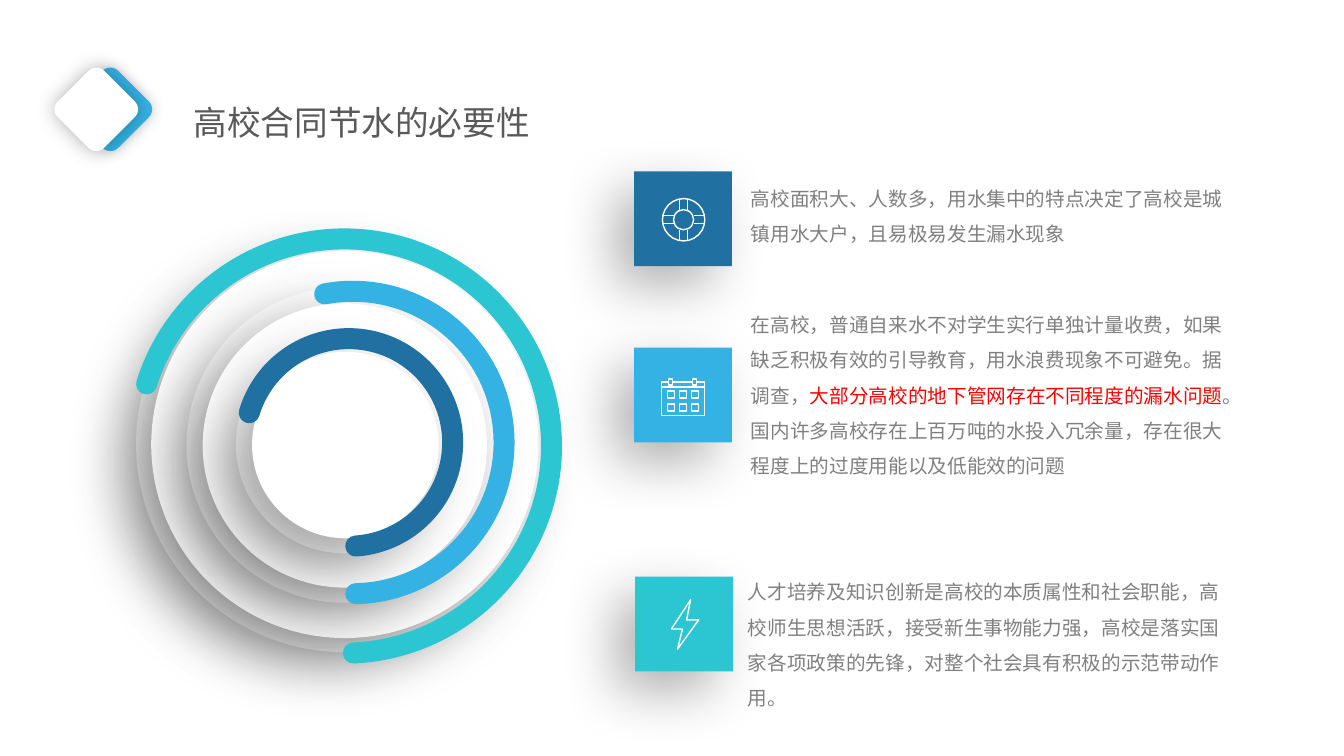
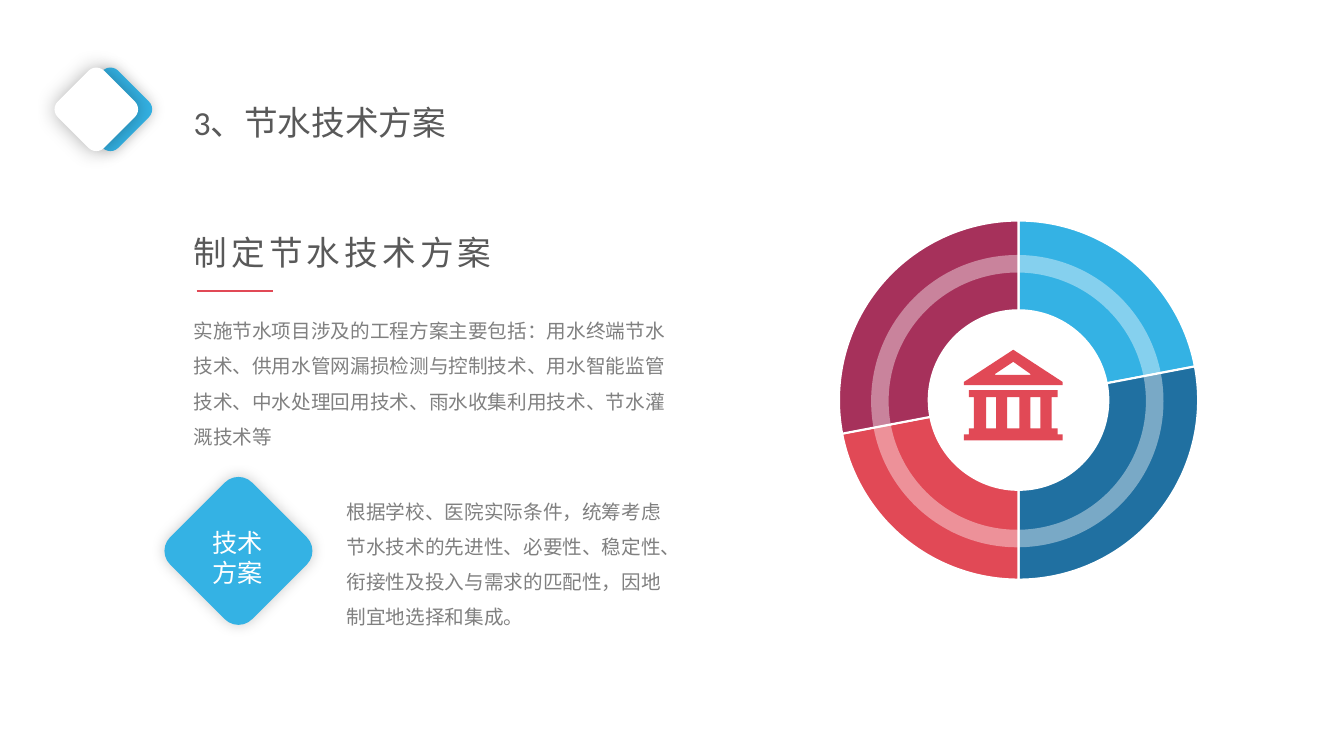
from dataclasses import dataclass

from lxml import etree
from pptx import Presentation
from pptx.chart.data import CategoryChartData
from pptx.dml.color import RGBColor
from pptx.enum.chart import XL_CHART_TYPE
from pptx.enum.shapes import MSO_CONNECTOR, MSO_SHAPE
from pptx.enum.text import MSO_ANCHOR, MSO_AUTO_SIZE, PP_ALIGN
from pptx.oxml.ns import qn
from pptx.util import Pt

RECT, ROUND = MSO_SHAPE.RECTANGLE, MSO_SHAPE.ROUNDED_RECTANGLE
OVAL, ARC, DONUT = MSO_SHAPE.OVAL, MSO_SHAPE.ARC, MSO_SHAPE.DONUT
STRAIGHT = MSO_CONNECTOR.STRAIGHT
RING = XL_CHART_TYPE.DOUGHNUT
TOP, LEFT, MID = MSO_ANCHOR.TOP, PP_ALIGN.LEFT, PP_ALIGN.CENTER
FIXED, GROW = MSO_AUTO_SIZE.NONE, MSO_AUTO_SIZE.SHAPE_TO_FIT_TEXT
SCALE = 9144


@dataclass(frozen=True)
class Theme:
    font: str = "Calibri"
    white: RGBColor = RGBColor(255, 255, 255)
    black: RGBColor = RGBColor(0, 0, 0)
    dark: RGBColor = RGBColor(0x59, 0x59, 0x59)
    gray: RGBColor = RGBColor(0x80, 0x80, 0x80)
    alert: RGBColor = RGBColor(255, 0, 0)
    navy: RGBColor = RGBColor(0x20, 0x70, 0xA1)
    sky: RGBColor = RGBColor(0x34, 0xB2, 0xE4)
    teal: RGBColor = RGBColor(0x2C, 0xC6, 0xD2)
    coral: RGBColor = RGBColor(0xE1, 0x49, 0x56)
    plum: RGBColor = RGBColor(0xA6, 0x31, 0x5B)
    head: int = 24
    label: int = 18
    body: int = 14
    small: int = 10


T = Theme()
DEEP = {"alpha": 30, "blur": 40, "dist": 20, "angle": 135}
SOFT = {"alpha": 20, "blur": 10, "dist": 0, "angle": 0}
HALO = {"alpha": 30, "blur": 15, "dist": 0, "angle": 0}


def px(*sizes):
    return [size * SCALE for size in sizes]


def apply(target, values):
    for name, value in values.items():
        setattr(target, name, value)


def fade(color, alpha):
    etree.SubElement(color, qn("a:alpha"), val=str(alpha * 1000))


def paint(shape, fill=None, line=None, width=1, alpha=None, shade=None):
    shape.shadow.inherit = False
    props = shape.element.spPr
    if fill is None:
        shape.fill.background()
    else:
        shape.fill.solid()
        shape.fill.fore_color.rgb = fill
    if alpha:
        fade(props.find(qn("a:solidFill"))[0], alpha)
    if line is None:
        shape.line.fill.background()
    else:
        shape.line.color.rgb = line
        shape.line.width = Pt(width)
    if shade:
        outer = etree.SubElement(
            props.find(qn("a:effectLst")), qn("a:outerShdw"),
            blurRad=str(Pt(shade["blur"])), dist=str(Pt(shade["dist"])),
            dir=str(shade["angle"] * 60000), algn="ctr", rotWithShape="0")
        fade(etree.SubElement(outer, qn("a:srgbClr"), val=str(T.black)),
             shade["alpha"])
    return shape


def block(shapes, kind, box, **look):
    return paint(shapes.add_shape(kind, *px(*box)), **look)


def diamond(shapes, box, fill, shade):
    block(shapes, ROUND, box, fill=fill, shade=shade).rotation = 45


def rule(shapes, ends, color, width=1):
    line = shapes.add_connector(STRAIGHT, *px(*ends))
    line.line.color.rgb = color
    line.line.width = Pt(width)
    etree.SubElement(line.element.spPr, qn("a:effectLst"))
    return line


def outline(shapes, paths, close=True, **look):
    pen = shapes.build_freeform(*paths[0][0], scale=SCALE)
    for i, path in enumerate(paths):
        if i:
            pen.move_to(*path[0])
        pen.add_line_segments(path[1:], close=close)
    return paint(pen.convert_to_shape(), **look)


def frame_box(x, y, right, base):
    return [(x, y), (right, y), (right, base), (x, base)]


def write(frame, paras, size, color, align=LEFT, spacing=1.5, track=0,
          **values):
    apply(frame, {"word_wrap": True, "auto_size": GROW, **values})
    for i, runs in enumerate(paras):
        para = frame.add_paragraph() if i else frame.paragraphs[0]
        apply(para, {"alignment": align, "line_spacing": spacing})
        for text, tint in runs:
            run = para.add_run()
            run.text = text
            apply(run.font, {"name": T.font, "size": Pt(size)})
            run.font.color.rgb = tint or color
            if track:
                run.font._element.set("spc", str(track * 100))


def note(shapes, box, *runs):
    frame = shapes.add_textbox(*px(*box)).text_frame
    write(frame, [runs], T.body, T.gray)


def start(deck, text):
    slide = deck.slides.add_slide(deck.slide_layouts[5])
    title = slide.shapes.title
    apply(title, dict(zip(("left", "top", "width", "height"),
                          px(182, 76, 409, 71))))
    write(title.text_frame, [[(text, None)]], T.head, T.dark,
          auto_size=FIXED, vertical_anchor=TOP)
    diamond(slide.shapes, (77, 76, 65, 65), T.sky, SOFT)
    diamond(slide.shapes, (63, 76, 65, 65), T.white, HALO)
    return slide.shapes


def dial(shapes):
    for x, y, size, inner in ((135, 234, 413, 384), (185, 285, 313, 282),
                              (234, 333, 216, 185)):
        gap = (size - inner) // 2 + (size - inner) % 2
        block(shapes, OVAL, (x, y, size, size), fill=T.white, alpha=65,
              shade=DEEP)
        block(shapes, OVAL, (x + gap, y + gap, inner, inner), fill=T.white,
              shade=DEEP)
    for x, y, size, begin, end, color in (
            (136, 237, 411, 197.45, 87.48, T.teal),
            (200, 289, 300, 259.26, 88.87, T.sky),
            (243, 336, 206, 196.61, 86.17, T.navy)):
        arc = block(shapes, ARC, (x, y, size, size), line=color, width=15)
        arc.adjustments[0] = begin * 0.6
        arc.adjustments[1] = end * 0.6
        arc.element.spPr.find(qn("a:ln")).set("cap", "rnd")


def card(shapes, x, y, fill, icon):
    group = shapes.add_group_shape().shapes
    block(group, RECT, (x, y, 97, 94), fill=fill, shade=DEEP)
    icon(group)


def buoy(shapes):
    x, y = 678, 218
    for r in (21, 10):
        block(shapes, OVAL, (x - r, y - r, 2 * r, 2 * r), line=T.white)
    for side in (-1, 1):
        near, far = side * 10, side * 21
        for off in (-4, 4):
            rule(shapes, (x + off, y + near, x + off, y + far), T.white)
            rule(shapes, (x + near, y + off, x + far, y + off), T.white)


def dates(shapes):
    hooks = [block(shapes, RECT, (x, 376, 4, 6), line=T.white)
             for x in (663, 687)]
    bar = rule(shapes, (687, 379, 667, 379), T.white)
    bar.begin_connect(hooks[1], 1)
    bar.end_connect(hooks[0], 3)
    outline(shapes, [[(663, 379), (656, 379), (656, 412), (699, 412),
                      (699, 379), (691, 379)]], close=False, line=T.white)
    for col in range(3):
        for row in range(2):
            block(shapes, RECT, (662 + col * 12, 388 + row * 13, 7, 7),
                  line=T.white)
    rule(shapes, (656, 384, 699, 384), T.white)


def bolt(shapes):
    outline(shapes, [[(685, 595), (666, 624), (677, 624), (672, 644),
                      (693, 615), (681, 615)]], line=T.white)


def bank(shapes):
    body = [(1049, 425), (1043, 425), (1043, 394), (1049, 394), (1049, 387),
            (961, 387), (961, 394), (966, 394), (966, 425), (961, 425),
            (961, 431), (956, 431), (956, 437), (1054, 437), (1054, 431),
            (1049, 431)]
    gaps = [frame_box(x, 394, right, 425)
            for x, right in ((978, 988), (999, 1011), (1022, 1032))]
    roof = [(1005, 347), (956, 379), (956, 382), (1054, 382), (1054, 379)]
    hole = [(1022, 372), (987, 372), (987, 371), (1005, 359), (1022, 371)]
    outline(shapes, [body, *gaps, roof, hole], fill=T.coral)


def wheel(shapes):
    data = CategoryChartData()
    data.categories = ["1", "2", "3", "4"]
    data.add_series("Series 1", (22, 28, 22, 28))
    chart = shapes.add_chart(RING, *px(787, 203, 451, 388), data).chart
    apply(chart, {"has_legend": False, "has_title": False})
    apply(chart.font, {"name": T.font, "size": Pt(T.small)})
    chart.font.color.rgb = T.black
    plot = chart.plots[0]
    plot.vary_by_categories = True
    for i, color in enumerate((T.sky, T.navy, T.coral, T.plum)):
        style = plot.series[0].points[i].format
        style.fill.solid()
        style.fill.fore_color.rgb = color
        style.line.color.rgb = T.white
        style.line.width = Pt(1.5)
    area = chart.element.find(".//" + qn("c:plotArea"))
    for old in area.findall(qn("c:layout")):
        area.remove(old)
    layout = etree.Element(qn("c:layout"))
    area.insert(0, layout)
    manual = etree.SubElement(layout, qn("c:manualLayout"))
    for name, value in (("layoutTarget", "inner"), ("xMode", "edge"),
                        ("yMode", "edge"), ("x", "0.1"), ("y", "0.04"),
                        ("w", "0.79"), ("h", "0.92")):
        etree.SubElement(manual, qn("c:" + name), val=value)
    area.find(".//" + qn("c:holeSize")).set("val", "75")


def needs(deck):
    shapes = start(deck, "高校合同节水的必要性")
    dial(shapes)
    card(shapes, 629, 170, T.navy, buoy)
    card(shapes, 629, 345, T.sky, dates)
    card(shapes, 630, 572, T.teal, bolt)
    note(shapes, (735, 169, 502, 81),
         ("高校面积大、人数多，用水集中的特点决定了高校是城镇用水大户，且易极易发生漏水现象", None))
    note(shapes, (735, 294, 502, 187),
         ("在高校，普通自来水不对学生实行单独计量收费，如果缺乏积极有效的引导教育，"
          "用水浪费现象不可避免。据调查，", None),
         ("大部分高校的地下管网存在不同程度的漏水问题", T.alert),
         ("。国内许多高校存在上百万吨的水投入冗余量，存在很大程度上的过度用能以及低能效的问题", None))
    note(shapes, (732, 559, 502, 151),
         ("人才培养及知识创新是高校的本质属性和社会职能，高校师生思想活跃，接受新生事物能力强，"
          "高校是落实国家各项政策的先锋，对整个社会具有积极的示范带动作用。", None))


def plan(deck):
    shapes = start(deck, "3、节水技术方案")
    wheel(shapes)
    band = block(shapes, DONUT, (864, 253, 290, 290), fill=T.white, alpha=40)
    band.adjustments[0] = 0.06
    bank(shapes)
    note(shapes, (182, 300, 496, 151),
         ("实施节水项目涉及的工程方案主要包括：用水终端节水技术、供用水管网漏损检测与控制技术、"
          "用水智能监管技术、中水处理回用技术、雨水收集利用技术、节水灌溉技术等", None))
    head = shapes.add_textbox(*px(182, 205, 368, 71)).text_frame
    write(head, [[("制定节水技术方案", None)]], T.head, T.dark, track=3)
    rule(shapes, (195, 289, 271, 289), T.coral, 1.5)
    badge = shapes.add_group_shape().shapes
    diamond(badge, (179, 489, 115, 115), T.sky, SOFT)
    label = badge.add_textbox(*px(201, 518, 70, 71)).text_frame
    write(label, [[("技术", None)], [("方案", None)]], T.label, T.white,
          align=MID, spacing=1, word_wrap=False)
    note(shapes, (334, 479, 333, 151),
         ("根据学校、医院实际条件，统筹考虑节水技术的先进性、必要性、稳定性、"
          "衔接性及投入与需求的匹配性，因地制宜地选择和集成。", None))


def main():
    deck = Presentation()
    deck.slide_width, deck.slide_height = px(1333, 750)
    needs(deck)
    plan(deck)
    deck.save("out.pptx")


if __name__ == "__main__":
    main()
